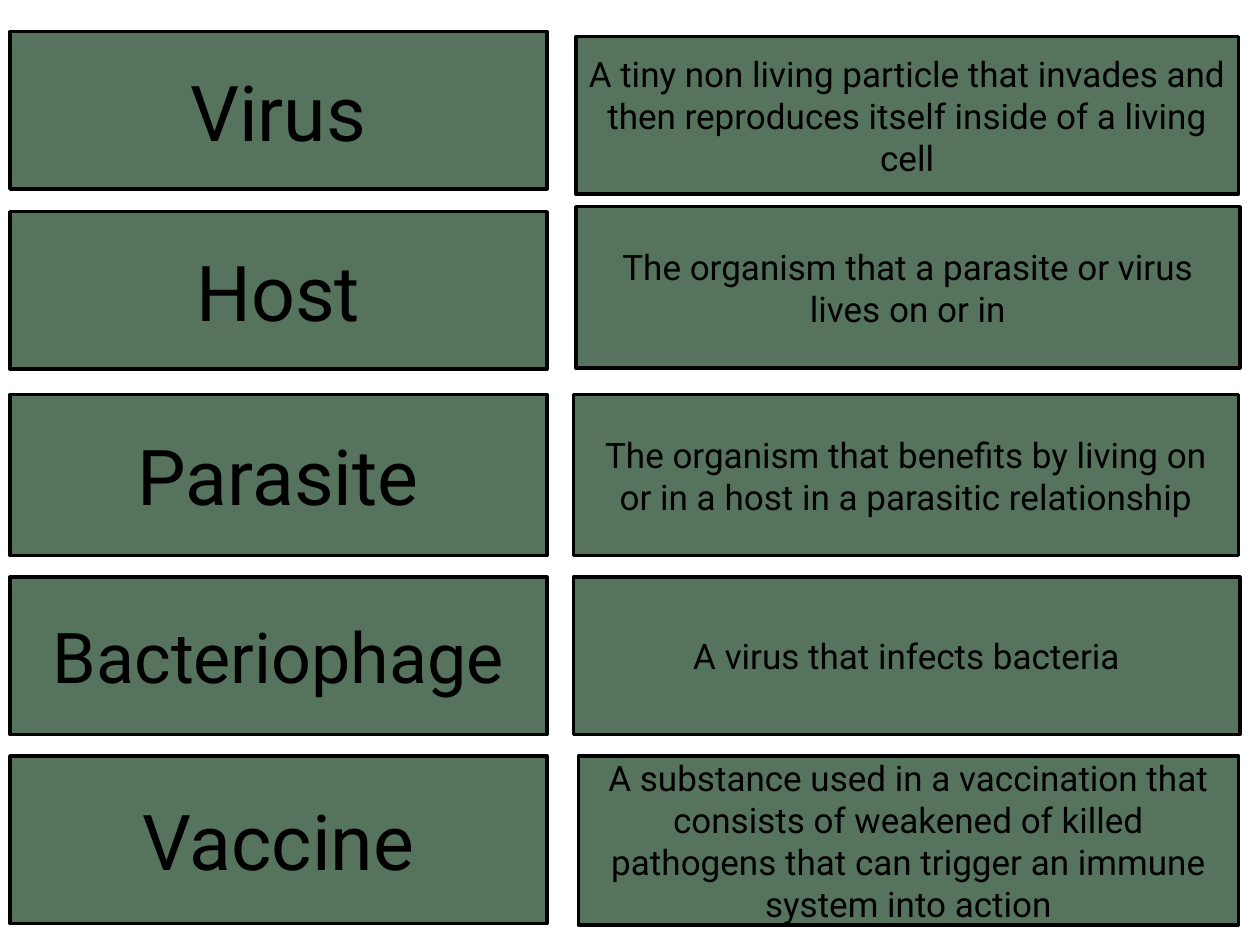
from dataclasses import dataclass
from pptx import Presentation as Deck
from pptx.dml.color import RGBColor as Color
from pptx.enum.shapes import MSO_SHAPE as Shape
from pptx.enum.text import MSO_ANCHOR as Anchor, PP_ALIGN as Align
from pptx.util import Pt

SCALE = 9144


@dataclass(frozen=True)
class Theme:
    font: str = "Roboto"
    ink: str = "000000"
    green: str = "56745D"
    line: int = 2
    term: int = 44
    long: int = 40
    body: int = 20


class Page:
    def __init__(self, slide, theme):
        self.slide = slide
        self.theme = theme

    def card(self, left, top, width, height, text, size):
        area = [n * SCALE for n in (left, top, width, height)]
        card = self.slide.shapes.add_shape(Shape.FLOWCHART_PROCESS, *area)
        card.shadow.inherit = False
        card.fill.solid()
        card.fill.fore_color.rgb = Color.from_string(self.theme.green)
        card.line.color.rgb = Color.from_string(self.theme.ink)
        card.line.width = Pt(self.theme.line)
        frame = card.text_frame
        frame.word_wrap = True
        frame.vertical_anchor = Anchor.MIDDLE
        frame.text = text
        para = frame.paragraphs[0]
        para.alignment = Align.CENTER
        font = para.runs[0].font
        font.name = self.theme.font
        font.size = Pt(size)
        font.color.rgb = Color.from_string(self.theme.ink)


def main():
    theme = Theme()
    deck = Deck()
    deck.slide_width = 1000 * SCALE
    deck.slide_height = 750 * SCALE
    page = Page(deck.slides.add_slide(deck.slide_layouts[6]), theme)

    rows = [
        ("Virus", theme.term, (25, 125), (457, 29, 526, 125),
         "A tiny non living particle that invades and then reproduces "
         "itself inside of a living cell"),
        ("Host", theme.term, (168, 125), (457, 164, 527, 128),
         "The organism that a parasite or virus lives on or in"),
        ("Parasite", theme.term, (313, 128), (455, 313, 528, 128),
         "The organism that benefits by living on or in a host in a "
         "parasitic relationship"),
        ("Bacteriophage", theme.long, (458, 125), (455, 458, 529, 125),
         "A virus that infects bacteria"),
        ("Vaccine", theme.term, (600, 133), (459, 600, 524, 134),
         "A substance used in a vaccination that consists of weakened of "
         "killed pathogens that can trigger an immune system into action"),
    ]
    for term, size, (top, height), area, meaning in rows:
        page.card(8, top, 426, height, term, size)
        page.card(*area, meaning, theme.body)

    deck.save("out.pptx")


if __name__ == "__main__":
    main()
